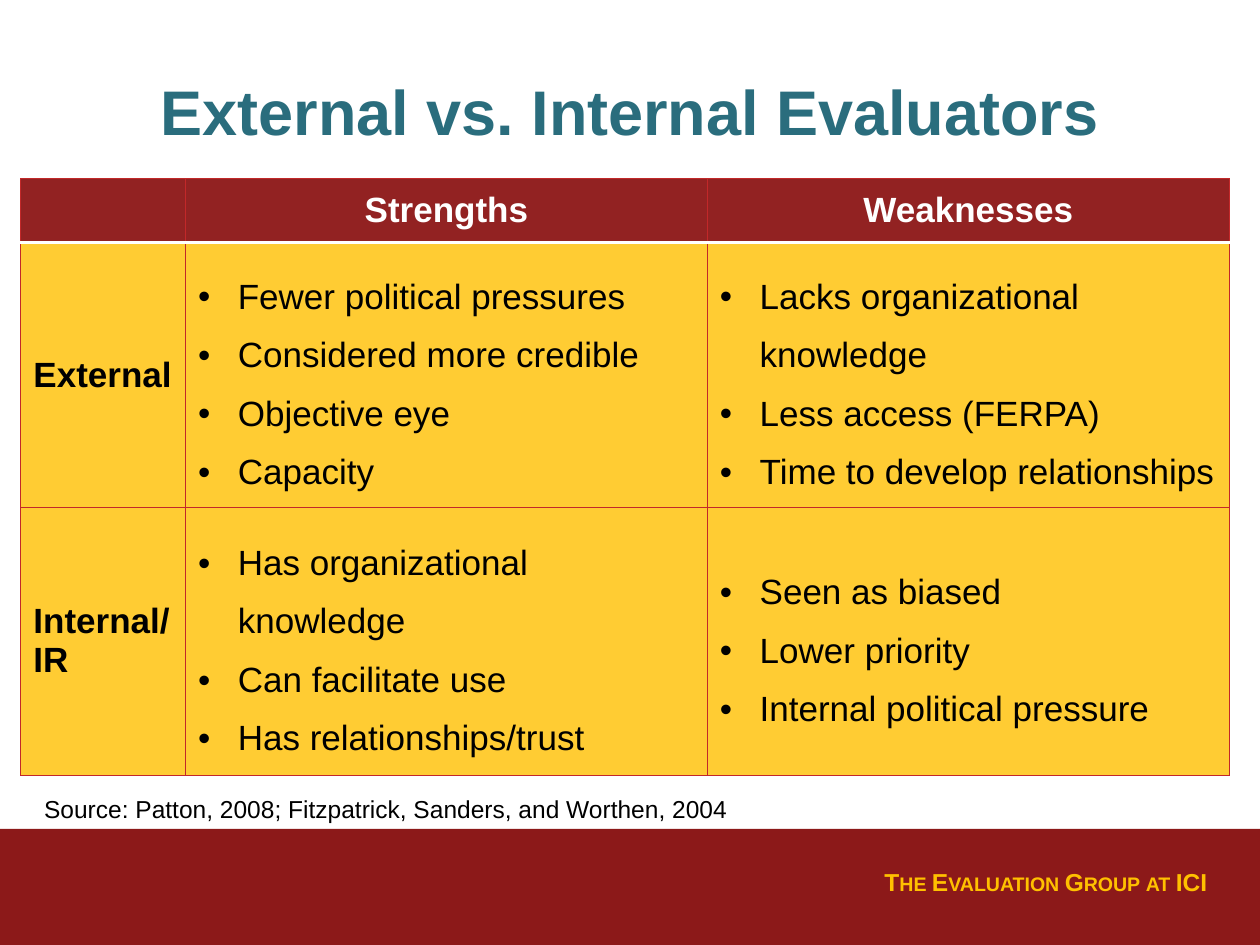
"""Build a slide that compares external and internal evaluators in a table."""
import pptx
import pptx.util
import pptx.dml.color
import pptx.enum.shapes
import pptx.enum.text
import pptx.oxml
import pptx.oxml.ns

Cm = pptx.util.Cm
Align = pptx.enum.text.PP_ALIGN
Middle = pptx.enum.text.MSO_ANCHOR.MIDDLE


def paint(item, tone):
    item.rgb = pptx.dml.color.RGBColor.from_string(tone)


def style(frame, size, tone, bold=False, align=Align.LEFT):
    for para in frame.paragraphs:
        para.alignment = align
        for run in para.runs:
            run.font.name = "Arial"
            run.font.size = pptx.util.Pt(size)
            run.font.bold = bold
            paint(run.font.color, tone)


deck = pptx.Presentation()
deck.slide_width, deck.slide_height = Cm(25.4), Cm(19.05)
slide = deck.slides.add_slide(deck.slide_layouts[5])

band = slide.shapes.add_shape(
    pptx.enum.shapes.MSO_SHAPE.RECTANGLE, 0, Cm(16.71), Cm(25.4), Cm(2.34))
band.shadow.inherit = False
band.fill.solid()
paint(band.fill.fore_color, "8C1919")
band.line.fill.background()

brand = slide.shapes.add_textbox(Cm(17.58), Cm(17.35), Cm(7.18), Cm(0.86)).text_frame
brand.word_wrap = False
brand.text = "The Evaluation Group at ICI"
style(brand, 14, "FFC000", True)
brand.paragraphs[0].runs[0].font._element.set("cap", "small")

title = slide.shapes.title
title.left, title.top, title.width, title.height = Cm(2.12), Cm(0.64), Cm(21.16), Cm(3.18)
title.text_frame.text = "External vs. Internal Evaluators"
title.text_frame.vertical_anchor = Middle
style(title.text_frame, 36, "2A6D7D", True, Align.CENTER)

rows = [
    ["", "Strengths", "Weaknesses"],
    ["External",
     "Fewer political pressures\nConsidered more credible\nObjective eye\nCapacity",
     "Lacks organizational knowledge\nLess access (FERPA)\nTime to develop relationships"],
    ["Internal/\nIR",
     "Has organizational knowledge\nCan facilitate use\nHas relationships/trust",
     "Seen as biased\nLower priority\nInternal political pressure"],
]
grid = slide.shapes.add_table(3, 3, Cm(0.42), Cm(3.6), Cm(24.36), Cm(11.85)).table
for col, width in zip(grid.columns, (3.32, 10.52, 10.52)):
    col.width = Cm(width)
for row, height in zip(grid.rows, (1.29, 5.16, 5.4)):
    row.height = Cm(height)

space = pptx.oxml.ns.nsdecls("a")
for r, texts in enumerate(rows):
    for c, text in enumerate(texts):
        cell = grid.cell(r, c)
        cell.text_frame.text = text
        cell.vertical_anchor = Middle
        for side in "LRTB":
            rule = (r, side) in ((0, "B"), (1, "T"))
            tone, width = ("FFFFFF", 2) if rule else ("C22829", 0.75)
            cell._tc.get_or_add_tcPr().append(pptx.oxml.parse_xml(
                f'<a:ln{side} {space} w="{pptx.util.Pt(width)}"><a:solidFill>'
                f'<a:srgbClr val="{tone}"/></a:solidFill></a:ln{side}>'))
        cell.fill.solid()
        paint(cell.fill.fore_color, "FFCC33" if r else "922222")
        if r and c:
            for para in cell.text_frame.paragraphs:
                props = para._p.get_or_add_pPr()
                props.set("marL", str(Cm(0.8)))
                props.set("indent", str(-Cm(0.8)))
                props.append(pptx.oxml.parse_xml(f'<a:buFont {space} typeface="Arial"/>'))
                props.append(pptx.oxml.parse_xml(f'<a:buChar {space} char="•"/>'))
                para.line_spacing = 1.5
        style(cell.text_frame, 20, "000000" if r else "FFFFFF",
              not (r and c), Align.LEFT if r else Align.CENTER)

source = slide.shapes.add_textbox(Cm(0.64), Cm(15.88), Cm(16.93), Cm(0.86)).text_frame
source.word_wrap = True
source.text = "Source: Patton, 2008; Fitzpatrick, Sanders, and Worthen, 2004"
style(source, 14, "000000")

deck.save("out.pptx")
